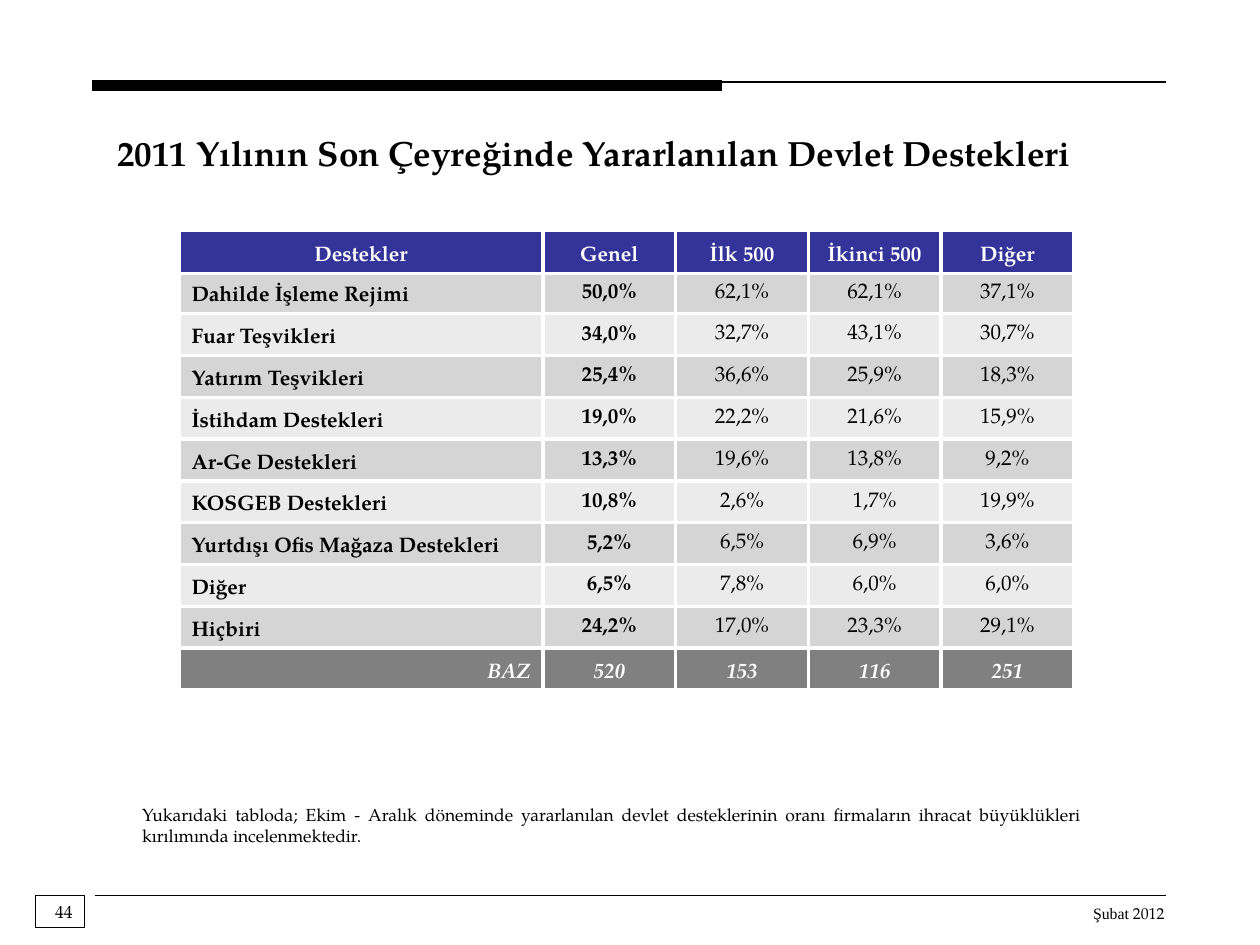
from lxml import etree
from pptx import Presentation
from pptx.dml.color import RGBColor
from pptx.enum.shapes import MSO_CONNECTOR, MSO_SHAPE
from pptx.enum.text import MSO_ANCHOR, MSO_AUTO_SIZE, PP_ALIGN
from pptx.oxml.ns import qn
from pptx.util import Inches, Pt

LEFT, CENTER, RIGHT, JUSTIFY = PP_ALIGN.LEFT, PP_ALIGN.CENTER, PP_ALIGN.RIGHT, PP_ALIGN.JUSTIFY
TOP, MIDDLE, BOTTOM = MSO_ANCHOR.TOP, MSO_ANCHOR.MIDDLE, MSO_ANCHOR.BOTTOM
NO_FIT = MSO_AUTO_SIZE.NONE
STRAIGHT, RECTANGLE = MSO_CONNECTOR.STRAIGHT, MSO_SHAPE.RECTANGLE

GRID = Inches(0.1)  # the page is 100 columns by 75 rows
FONT = "TeX Gyre Pagella"
DATE_FONT = "Times New Roman"
COLORS = {
    "ink": "000000",
    "paper": "FFFFFF",
    "header": "333399",
    "odd": "D5D5D5",
    "even": "EBEBEB",
    "base": "808080",
}

HEADINGS = ["Destekler", "Genel", "İlk 500", "İkinci 500", "Diğer"]
SUPPORTS = [
    ["Dahilde İşleme Rejimi", "50,0%", "62,1%", "62,1%", "37,1%"],
    ["Fuar Teşvikleri", "34,0%", "32,7%", "43,1%", "30,7%"],
    ["Yatırım Teşvikleri", "25,4%", "36,6%", "25,9%", "18,3%"],
    ["İstihdam Destekleri", "19,0%", "22,2%", "21,6%", "15,9%"],
    ["Ar-Ge Destekleri", "13,3%", "19,6%", "13,8%", "9,2%"],
    ["KOSGEB Destekleri", "10,8%", "2,6%", "1,7%", "19,9%"],
    ["Yurtdışı Ofis Mağaza Destekleri", "5,2%", "6,5%", "6,9%", "3,6%"],
    ["Diğer", "6,5%", "7,8%", "6,0%", "6,0%"],
    ["Hiçbiri", "24,2%", "17,0%", "23,3%", "29,1%"],
]
BASES = ["BAZ", "520", "153", "116", "251"]


def units(*lengths):
    return [round(length * GRID) for length in lengths]


def color(name):
    return RGBColor.from_string(COLORS[name])


def write(paragraph, text, size=12, ink="ink", font=FONT, bold=False, italic=False, align=LEFT):
    """Add one formatted span to a paragraph."""
    paragraph.alignment = align
    span = paragraph.add_run()
    span.text = text
    span.font.size = Pt(size)
    span.font.name = font
    span.font.bold = bold
    span.font.italic = italic
    span.font.color.rgb = color(ink)


class Page:
    def __init__(self, deck):
        self.slide = deck.slides.add_slide(deck.slide_layouts[5])
        self.shapes = self.slide.shapes

    def title(self, area, text):
        box = self.shapes.title
        box.left, box.top, box.width, box.height = units(*area)
        frame = box.text_frame
        frame.auto_size = NO_FIT
        frame.word_wrap = True
        frame.vertical_anchor = TOP
        write(frame.paragraphs[0], text, size=20, bold=True)

    def text(self, area, *spans, wrap=True, **style):
        """Add a box; each span is a pair of wording and font."""
        frame = self.shapes.add_textbox(*units(*area)).text_frame
        frame.word_wrap = wrap
        for wording, font in spans:
            write(frame.paragraphs[0], wording, font=font, **style)

    def rule(self, left, right, row, weight=0.75):
        line = self.shapes.add_connector(STRAIGHT, *units(left, row, right, row))
        line.line.color.rgb = color("ink")
        line.line.width = Pt(weight)
        etree.SubElement(line._element.spPr, qn("a:effectLst"))

    def frame(self, area):
        box = self.shapes.add_shape(RECTANGLE, *units(*area))
        box.shadow.inherit = False
        box.fill.background()
        box.line.color.rgb = color("ink")
        box.line.width = Pt(0.75)

    def table(self, area, widths, heights):
        table = self.shapes.add_table(len(heights), len(widths), *units(*area)).table
        table.first_row = table.horz_banding = False
        for column, width in zip(table.columns, units(*widths)):
            column.width = width
        for row, height in zip(table.rows, units(*heights)):
            row.height = height
        return table

    def cell(self, cell, text, fill, anchor=BOTTOM, margins=(1, 0.5, 1, 0.5), **style):
        cell.margin_left, cell.margin_top, cell.margin_right, cell.margin_bottom = units(*margins)
        cell.vertical_anchor = anchor
        cell.fill.solid()
        cell.fill.fore_color.rgb = color(fill)
        write(cell.text_frame.paragraphs[0], text, **style)
        properties = cell._tc.get_or_add_tcPr()
        for position, side in enumerate(("lnL", "lnR", "lnT", "lnB")):
            border = etree.Element(qn(f"a:{side}"), w=str(Pt(2.25)))
            solid = etree.SubElement(border, qn("a:solidFill"))
            etree.SubElement(solid, qn("a:srgbClr"), val=COLORS["paper"])
            properties.insert(position, border)


def add_supports_table(page):
    heights = [3.4, 3.2] + [3.32] * (len(SUPPORTS) + len(BASES[:1]) - 1)
    table = page.table((14.2, 18.3, 71, 36.6), [28.9] + [10.53] * 4, heights)
    last = len(heights) - 1

    for column, (heading, base) in enumerate(zip(HEADINGS, BASES)):
        page.cell(table.cell(0, column), heading, "header",
                  ink="paper", bold=True, align=CENTER)
        page.cell(table.cell(last, column), base, "base", ink="paper",
                  bold=True, italic=True, align=CENTER if column else RIGHT)

    for row, (label, *shares) in enumerate(SUPPORTS, start=1):
        fill = "odd" if row % 2 else "even"
        page.cell(table.cell(row, 0), label, fill, bold=True, align=JUSTIFY)
        for column, share in enumerate(shares, start=1):
            page.cell(table.cell(row, column), share, fill, anchor=MIDDLE,
                      margins=(0.1, 0.1, 0.1, 0), bold=column == 1, align=CENTER)


def main():
    deck = Presentation()
    deck.slide_width, deck.slide_height = units(100, 75)
    page = Page(deck)

    page.rule(7.5, 92.5, 71.1)
    page.text((85.7, 71.2, 7.7, 2.5), ("Şubat ", DATE_FONT), ("2012", FONT),
              wrap=False, size=9, align=RIGHT)
    page.frame((2.8, 71.1, 3.9, 2.5))
    page.rule(7.3, 57.3, 6.8, weight=6)
    page.rule(7.5, 92.5, 6.5)
    page.text((3.4, 71, 25, 4), ("44", FONT), size=10)

    add_supports_table(page)
    page.text((10.3, 63.3, 76.4, 6),
              ("Yukarıdaki tabloda; Ekim - Aralık döneminde yararlanılan devlet "
               "desteklerinin oranı firmaların ihracat büyüklükleri kırılımında "
               "incelenmektedir.", FONT), size=10, align=JUSTIFY)
    page.title((8.3, 9.9, 84.5, 4.4),
               "2011 Yılının Son Çeyreğinde Yararlanılan Devlet Destekleri")
    deck.save("out.pptx")


if __name__ == "__main__":
    main()
